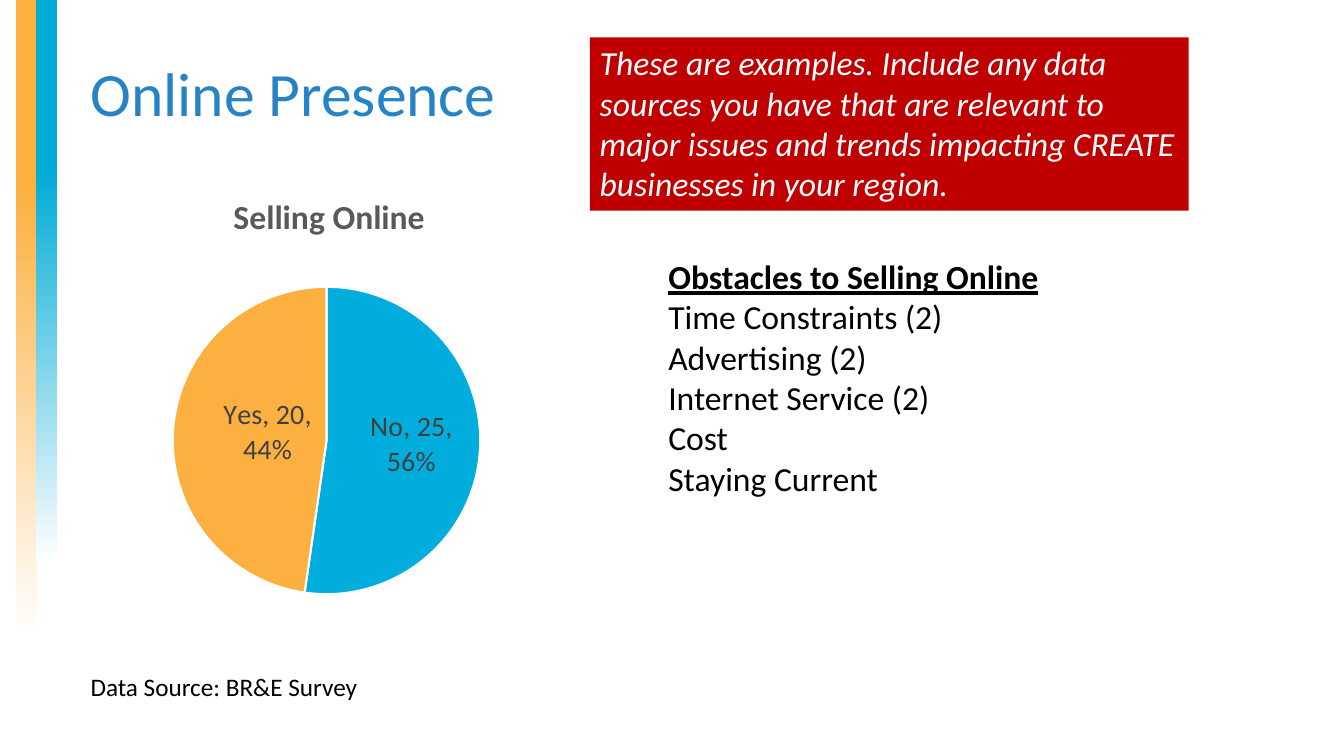
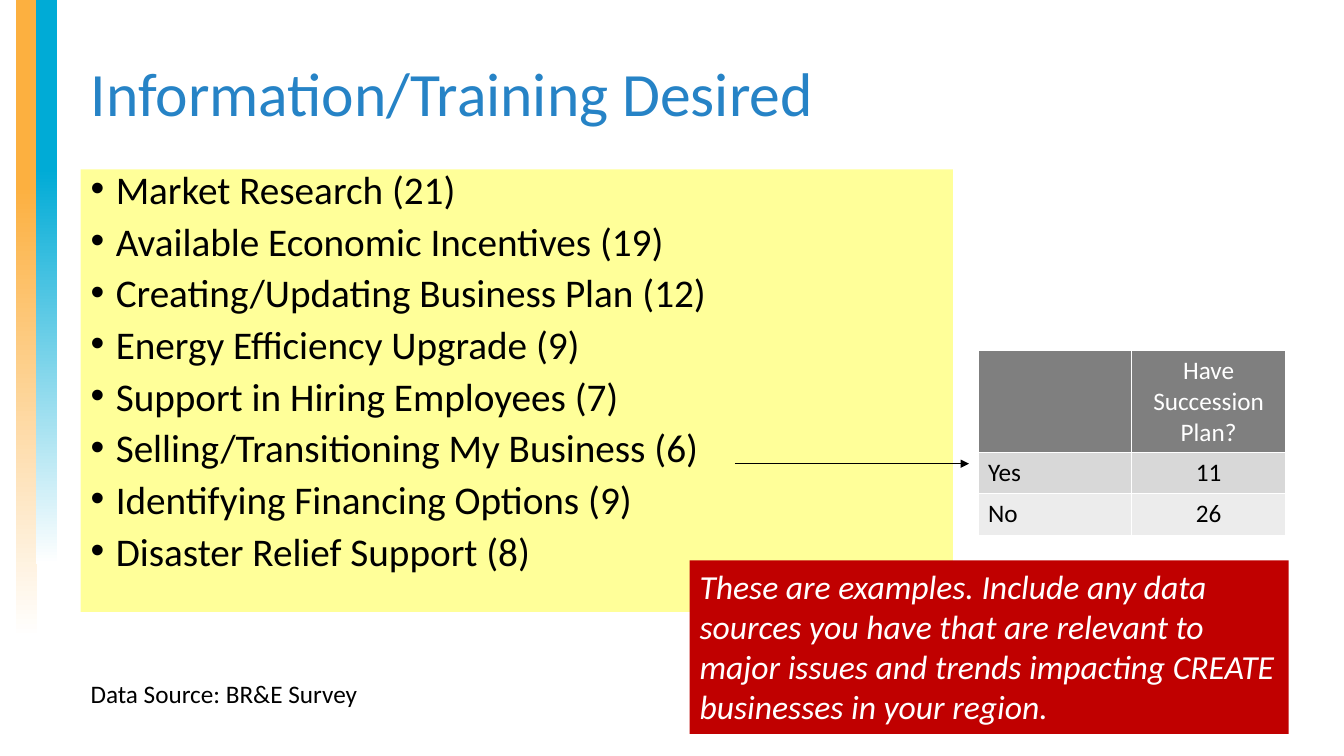
"""Build two slides on survey results about online selling and training needs."""
import pptx
import pptx.chart.data
import pptx.dml.color
import pptx.enum.chart
import pptx.enum.shapes
import pptx.enum.text
import pptx.oxml.ns
import pptx.util
from lxml import etree

Inches, Pt = pptx.util.Inches, pptx.util.Pt
RGBColor = pptx.dml.color.RGBColor
RECTANGLE = pptx.enum.shapes.MSO_SHAPE.RECTANGLE
CENTER = pptx.enum.text.PP_ALIGN.CENTER
MIDDLE = pptx.enum.text.MSO_ANCHOR.MIDDLE
TOP = pptx.enum.text.MSO_ANCHOR.TOP
qn = pptx.oxml.ns.qn

FONT = "Calibri"
BLACK = RGBColor(0x00, 0x00, 0x00)
WHITE = RGBColor(0xFF, 0xFF, 0xFF)
TITLE_BLUE = RGBColor(0x26, 0x83, 0xC6)
BAND_ORANGE = RGBColor(0xFC, 0xB0, 0x40)
BAND_BLUE = RGBColor(0x00, 0xAB, 0xD6)
PIE_BLUE = RGBColor(0x00, 0xAD, 0xDC)
PIE_ORANGE = RGBColor(0xFB, 0xB0, 0x40)
CHART_TITLE_GRAY = RGBColor(0x59, 0x59, 0x59)
LABEL_GRAY = RGBColor(0x40, 0x40, 0x40)
NOTICE_RED = RGBColor(0xC0, 0x00, 0x00)
LIST_YELLOW = RGBColor(0xFF, 0xFF, 0x99)
HEADER_GRAY = RGBColor(0x7F, 0x7F, 0x7F)
ROW_GRAYS = (RGBColor(0xD8, 0xD8, 0xD8), RGBColor(0xEC, 0xEC, 0xEC))

NOTICE = (
    "These are examples. Include any data sources you have that are relevant "
    "to major issues and trends impacting CREATE businesses in your region."
)
OBSTACLES = (
    "Obstacles to Selling Online",
    "Time Constraints (2)",
    "Advertising (2)",
    "Internet Service (2)",
    "Cost",
    "Staying Current",
)
TOPICS = (
    "Market Research (21)",
    "Available Economic Incentives (19)",
    "Creating/Updating Business Plan (12)",
    "Energy Efficiency Upgrade (9)",
    "Support in Hiring Employees (7)",
    "Selling/Transitioning My Business (6)",
    "Identifying Financing Options (9)",
    "Disaster Relief Support (8)",
)
SUCCESSION = (("", "Have Succession Plan?"), ("Yes", "11"), ("No", "26"))


def style_font(font, size, color, bold=False, italic=False):
    """Set the typeface, size, colour and emphasis of a font."""
    font.name = FONT
    font.size = Pt(size)
    font.color.rgb = color
    font.bold = bold
    font.italic = italic


def write_lines(frame, lines, size, color, italic=False):
    """Write one paragraph per line and return the paragraphs."""
    frame.word_wrap = True
    frame.text = "\n".join(lines)
    for paragraph in frame.paragraphs:
        style_font(paragraph.font, size, color, italic=italic)
    return frame.paragraphs


def add_text(slide, box, lines, size, color=BLACK):
    """Add a text box and return its text frame."""
    frame = slide.shapes.add_textbox(*map(Inches, box)).text_frame
    write_lines(frame, lines, size, color)
    return frame


def add_panel(slide, box):
    """Add a rectangle without outline or shadow, its text at top left."""
    panel = slide.shapes.add_shape(RECTANGLE, *map(Inches, box))
    panel.shadow.inherit = False
    panel.line.fill.background()
    panel.text_frame.vertical_anchor = TOP
    return panel


def add_band(slide, center_x, length, color, solid_until):
    """Add a vertical band that fades to white from the top edge down."""
    thickness = 0.21
    band = add_panel(
        slide,
        (center_x - length / 2, (length - thickness) / 2, length, thickness),
    )
    band.rotation = 90
    band.fill.gradient()
    band.fill.gradient_angle = 0
    stops = zip(band.fill.gradient_stops, (solid_until, 1), (color, WHITE))
    for stop, position, stop_color in stops:
        stop.position = position
        stop.color.rgb = stop_color


def add_base_slide(deck, title, source_top):
    """Add a slide with the side bands, the title and the data source."""
    slide = deck.slides.add_slide(deck.slide_layouts[6])
    add_band(slide, 0.26, 6.33, BAND_ORANGE, 0.29)
    add_band(slide, 0.46, 5.6, BAND_BLUE, 0.3)
    heading = add_text(slide, (0.8, 0.23, 12.21, 1.45), [title], 44, TITLE_BLUE)
    heading.vertical_anchor = MIDDLE
    heading.paragraphs[0].line_spacing = 0.9
    add_text(slide, (0.8, source_top, 3.06, 0.4), ["Data Source: BR&E Survey"], 18)
    return slide


def add_notice(slide, left, top):
    """Add the red notice about the example data."""
    notice = add_panel(slide, (left, top, 5.94, 1.72))
    notice.fill.solid()
    notice.fill.fore_color.rgb = NOTICE_RED
    for paragraph in write_lines(notice.text_frame, [NOTICE], 24, WHITE, italic=True):
        paragraph.alignment = pptx.enum.text.PP_ALIGN.LEFT


def make_layout(**settings):
    """Return a manual chart layout with the given settings."""
    layout = etree.Element(qn("c:layout"))
    manual = etree.SubElement(layout, qn("c:manualLayout"))
    for name, value in settings.items():
        etree.SubElement(manual, qn(f"c:{name}"), val=str(value))
    return layout


def add_selling_pie(slide):
    """Add the pie chart of businesses that sell online."""
    answers = pptx.chart.data.CategoryChartData()
    answers.categories = ["Yes", "No"]
    answers.add_series("Selling Online", (23, 21))
    box = map(Inches, (0.68, 1.72, 5.17, 4.57))
    chart = slide.shapes.add_chart(
        pptx.enum.chart.XL_CHART_TYPE.PIE, *box, answers
    ).chart
    style_font(chart.font, 10, BLACK)
    chart.has_legend = False
    chart.has_title = True
    chart.chart_title.include_in_layout = False
    title = chart.chart_title.text_frame
    title.text = "Selling Online"
    style_font(title.paragraphs[0].font, 24, CHART_TITLE_GRAY, bold=True)

    plot_area = chart._chartSpace.chart.plotArea
    for automatic in plot_area.findall(qn("c:layout")):
        plot_area.remove(automatic)
    plot_area.insert(0, make_layout(
        layoutTarget="inner", xMode="edge", yMode="edge", x=0.2, y=0.24, w=0.59, h=0.68
    ))

    pie = chart.plots[0]
    pie.vary_by_categories = True
    labels = pie.series[0].data_labels
    labels.show_value = labels.show_percentage = labels.show_category_name = True
    style_font(labels.font, 20, LABEL_GRAY)
    slices = (
        (PIE_BLUE, "Yes, 20, 44%", -0.26, -0.03),
        (PIE_ORANGE, "No, 25, 56%", 0.31, 0.02),
    )
    for index, (color, caption, shift_x, shift_y) in enumerate(slices):
        point = pie.series[0].points[index]
        point.format.fill.solid()
        point.format.fill.fore_color.rgb = color
        point.format.line.color.rgb = WHITE
        point.format.line.width = Pt(1.5)
        label = point.data_label
        label.text_frame.text = caption
        style_font(label.text_frame.paragraphs[0].runs[0].font, 20, LABEL_GRAY)
        label.position = pptx.enum.chart.XL_LABEL_POSITION.CENTER
        details = label._get_or_add_dLbl()
        details.insert(1, make_layout(x=shift_x, y=shift_y))
        for part in ("c:showVal", "c:showCatName", "c:showPercent"):
            details.find(qn(part)).set("val", "1")


def add_topic_list(slide):
    """Add the bulleted list of topics on a yellow panel."""
    panel = add_panel(slide, (0.8, 1.68, 8.65, 4.39))
    panel.fill.solid()
    panel.fill.fore_color.rgb = LIST_YELLOW
    panel.text_frame.text = "\n".join(TOPICS)
    for index, paragraph in enumerate(panel.text_frame.paragraphs):
        paragraph.alignment = pptx.enum.text.PP_ALIGN.LEFT
        paragraph.line_spacing = 0.8
        paragraph.space_before = Pt(10 if index else 0)
        properties = paragraph._p.get_or_add_pPr()
        properties.set("marL", str(Inches(0.25)))
        properties.set("indent", str(Inches(-0.25)))
        etree.SubElement(properties, qn("a:buFont"), typeface="Arial")
        etree.SubElement(properties, qn("a:buChar"), char="•")
        style_font(paragraph.font, 28, BLACK)


def add_succession_table(slide):
    """Add the table of answers about succession plans."""
    box = map(Inches, (9.7, 3.48, 3.05, 1.83))
    table = slide.shapes.add_table(len(SUCCESSION), 2, *box).table
    for row, height in zip(table.rows, (1.01, 0.41, 0.41)):
        row.height = Inches(height)
    fills = (HEADER_GRAY, *ROW_GRAYS)
    for row_index, (texts, fill) in enumerate(zip(SUCCESSION, fills)):
        for column_index, text in enumerate(texts):
            cell = table.cell(row_index, column_index)
            cell.fill.solid()
            cell.fill.fore_color.rgb = fill
            color = BLACK if row_index else WHITE
            paragraph = write_lines(cell.text_frame, [text], 18, color)[0]
            if column_index:
                paragraph.alignment = CENTER


def add_arrow(slide, start_x, end_x, y):
    """Add a thin horizontal arrow."""
    ends = map(Inches, (start_x, y, end_x, y))
    arrow = slide.shapes.add_connector(
        pptx.enum.shapes.MSO_CONNECTOR.STRAIGHT, *ends
    )
    arrow.line.color.rgb = BLACK
    arrow.line.width = Pt(0.5)
    etree.SubElement(arrow.line._get_or_add_ln(), qn("a:tailEnd"), type="triangle")
    etree.SubElement(arrow._element.spPr, qn("a:effectLst"))


def main():
    """Build and save both slides."""
    deck = pptx.Presentation()
    deck.slide_width, deck.slide_height = Inches(13.33), Inches(7.5)

    presence = add_base_slide(deck, "Online Presence", 6.61)
    add_selling_pie(presence)
    obstacles = add_text(presence, (6.53, 2.49, 5.59, 2.93), OBSTACLES, 24)
    obstacles.paragraphs[0].font.bold = True
    obstacles.paragraphs[0].font.underline = True
    add_notice(presence, 5.85, 0.37)

    training = add_base_slide(deck, "Information/Training Desired", 6.68)
    add_topic_list(training)
    add_succession_table(training)
    add_arrow(training, 7.29, 9.61, 4.6)
    add_notice(training, 6.84, 5.56)

    deck.save("out.pptx")


if __name__ == "__main__":
    main()
